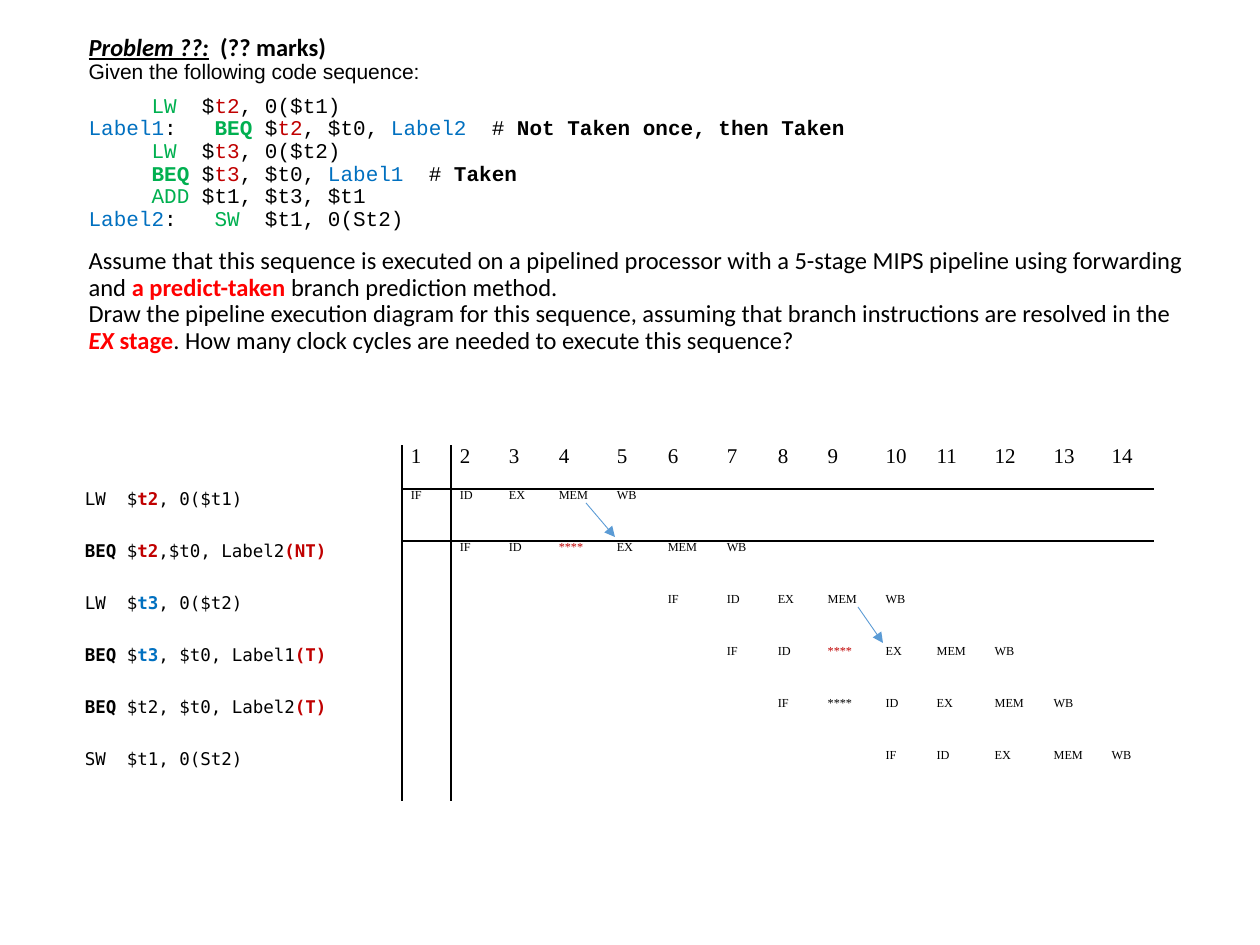
import dataclasses

import lxml.etree
import pptx
import pptx.dml.color
import pptx.enum.shapes
import pptx.enum.text
import pptx.oxml
import pptx.oxml.ns
import pptx.util

EMU_PER_PX = 914400 / 126


@dataclasses.dataclass(frozen=True)
class Theme:
    black: str = "000000"
    green: str = "00B050"
    dark_red: str = "C00000"
    red: str = "FF0000"
    blue: str = "0070C0"
    arrow: str = "5B9BD5"
    heading: tuple = ("Calibri", 14)
    intro: tuple = ("Arial", 12)
    code: tuple = ("Courier New", 12)
    instruction: tuple = ("DejaVu Sans Mono", 10)
    cycle: tuple = ("Times New Roman", 12)
    stage: tuple = ("Times New Roman", 7)


THEME = Theme()

# Span styles: colour and emphasis (b bold, i italic, u underline)
STYLES = {
    "plain": (THEME.black, ""),
    "bold": (THEME.black, "b"),
    "heading": (THEME.black, "biu"),
    "op": (THEME.green, ""),
    "branch": (THEME.green, "b"),
    "register": (THEME.dark_red, ""),
    "label": (THEME.blue, ""),
    "key": (THEME.red, "b"),
    "key italic": (THEME.red, "bi"),
    "hazard": (THEME.dark_red, "b"),
    "second hazard": (THEME.blue, "b"),
    "stall": (THEME.dark_red, ""),
}

# Paragraphs of the problem: typeface, space before, spans
PROBLEM = [
    (THEME.heading, 0, [("Problem ??:", "heading"), ("  (?? marks)", "bold")]),
    (THEME.intro, 0, [("Given the following code sequence:", "plain")]),
    (THEME.code, 6, [("\t", "plain"), ("LW  ", "op"), ("$", "plain"),
                     ("t2", "register"), (", 0($t1)", "plain")]),
    (THEME.code, 0, [("Label1", "label"), (":\t", "plain"), ("BEQ ", "branch"),
                     ("$", "plain"), ("t2", "register"), (", $t0, ", "plain"),
                     ("Label2", "label"), ("  # ", "plain"),
                     ("Not Taken once, then Taken", "bold")]),
    (THEME.code, 0, [("\t", "plain"), ("LW  ", "op"), ("$", "plain"),
                     ("t3", "register"), (", 0($t2)", "plain")]),
    (THEME.code, 0, [("\t", "plain"), ("BEQ ", "branch"), ("$", "plain"),
                     ("t3", "register"), (", $t0, ", "plain"),
                     ("Label1 ", "label"), (" # ", "plain"), ("Taken", "bold")]),
    (THEME.code, 0, [("\t", "plain"), ("ADD ", "op"), ("$t1, $t3, $t1", "plain")]),
    (THEME.code, 0, [("Label2", "label"), (":\t", "plain"), ("SW", "op"),
                     ("  $t1, 0(St2)", "plain")]),
    (THEME.heading, 10, [
        ("Assume that this sequence is executed on a pipelined processor with a "
         "5-stage MIPS pipeline using forwarding and ", "plain"),
        ("a predict-taken ", "key"), ("branch prediction method.", "plain")]),
    (THEME.heading, 0, [
        ("Draw the pipeline execution diagram for this sequence, assuming that "
         "branch instructions are resolved in the ", "plain"),
        ("EX", "key italic"), (" stage", "key"),
        (". How many clock cycles are needed to execute this sequence?", "plain")]),
]

# Instruction spans, first clock cycle, stages, style of a stall
PIPELINE = [
    ([("LW  $", "plain"), ("t2", "hazard"), (", 0($t1)", "plain")],
     1, "IF ID EX MEM WB", "plain"),
    ([("BEQ", "bold"), (" $", "plain"), ("t2", "hazard"),
      (",$t0, Label2", "plain"), ("(NT)", "hazard")],
     2, "IF ID **** EX MEM WB", "stall"),
    ([("LW  $", "plain"), ("t3", "second hazard"), (", 0($t2)", "plain")],
     6, "IF ID EX MEM WB", "plain"),
    ([("BEQ", "bold"), (" $", "plain"), ("t3", "second hazard"),
      (", $t0, Label1", "plain"), ("(T)", "hazard")],
     7, "IF ID **** EX MEM WB", "stall"),
    ([("BEQ", "bold"), (" $t2, $t0, Label2", "plain"), ("(T)", "hazard")],
     8, "IF **** ID EX MEM WB", "plain"),
    ([("SW  $t1, 0(St2)", "plain")], 10, "IF ID EX MEM WB", "plain"),
]
COLUMN_WIDTHS = [326, 49, 49, 50, 58, 51, 59, 51, 50, 58, 51, 58, 59, 58, 51]
HEADER_HEIGHT, ROW_HEIGHT = 44, 52
FORWARDING = [((586, 503), (615, 537)), ((858, 607), (883, 643))]
NO_STYLE = "{2D5ABB26-0587-4C30-8999-92F81FD0307C}"


def px(length):
    return pptx.util.Emu(round(length * EMU_PER_PX))


def add_element(parent, tag, **attributes):
    return lxml.etree.SubElement(parent, pptx.oxml.ns.qn(tag), attributes)


def add_spans(para, typeface, spans):
    for text, style in spans:
        color, emphasis = STYLES[style]
        span = para.add_run()
        span.text = text
        span.font.name, size = typeface
        span.font.size = pptx.util.Pt(size)
        span.font.color.rgb = pptx.dml.color.RGBColor.from_string(color)
        span.font.bold = "b" in emphasis
        span.font.italic = "i" in emphasis
        span.font.underline = "u" in emphasis


def fill_problem(box):
    box.left, box.top, box.width, box.height = px(76), px(29), px(1124), px(358)
    frame = box.text_frame
    frame.word_wrap = True
    frame.auto_size = pptx.enum.text.MSO_AUTO_SIZE.NONE
    frame.vertical_anchor = pptx.enum.text.MSO_ANCHOR.TOP
    for index, (typeface, space_before, spans) in enumerate(PROBLEM):
        para = frame.add_paragraph() if index else frame.paragraphs[0]
        if typeface == THEME.code:
            stops = add_element(para._p.get_or_add_pPr(), "a:tabLst")
            add_element(stops, "a:tab", pos=str(px(126)), algn="l")
        para.alignment = pptx.enum.text.PP_ALIGN.LEFT
        para.line_spacing = 0.9
        para.space_before = pptx.util.Pt(space_before)
        add_spans(para, typeface, spans)


def format_cell(cell, row, column):
    """Rule off the header row and the instruction column."""
    cell.margin_left = cell.margin_right = px(9)
    cell.margin_top = cell.margin_bottom = 0
    properties = cell._tc.get_or_add_tcPr()
    ruled = {"a:lnL": column == 1, "a:lnR": column == 0,
             "a:lnT": row == 1 and column > 0, "a:lnB": row == 0 and column > 0}
    for tag, visible in ruled.items():
        if visible:
            border = add_element(properties, tag, w=str(pptx.util.Pt(1)))
            fill = add_element(border, "a:solidFill")
            add_element(fill, "a:srgbClr", val=THEME.black)
    cell.fill.background()


def add_pipeline(page):
    height = HEADER_HEIGHT + ROW_HEIGHT * len(PIPELINE)
    frame = page.shapes.add_table(
        len(PIPELINE) + 1, len(COLUMN_WIDTHS),
        px(76), px(445), px(sum(COLUMN_WIDTHS)), px(height))
    table = frame.table
    table.first_row = table.horz_banding = False
    table._tbl.tblPr.find(pptx.oxml.ns.qn("a:tableStyleId")).text = NO_STYLE
    for column, width in zip(table.columns, COLUMN_WIDTHS):
        column.width = px(width)
    for row_index, row in enumerate(table.rows):
        row.height = px(ROW_HEIGHT if row_index else HEADER_HEIGHT)
        for column_index, cell in enumerate(row.cells):
            format_cell(cell, row_index, column_index)

    def write(row, column, typeface, spans):
        add_spans(table.cell(row, column).text_frame.paragraphs[0], typeface, spans)

    for cycle in range(1, len(COLUMN_WIDTHS)):
        write(0, cycle, THEME.cycle, [(str(cycle), "plain")])
    for row, (instruction, start, stages, stall_style) in enumerate(PIPELINE, 1):
        write(row, 0, THEME.instruction, instruction)
        for cycle, stage in enumerate(stages.split(), start):
            style = stall_style if stage == "****" else "plain"
            write(row, cycle, THEME.stage, [(stage, style)])


def add_arrow(page, start, end):
    arrow = page.shapes.add_connector(
        pptx.enum.shapes.MSO_CONNECTOR.STRAIGHT, *map(px, start + end))
    arrow.line.color.rgb = pptx.dml.color.RGBColor.from_string(THEME.arrow)
    arrow.line.width = pptx.util.Pt(0.5)
    add_element(arrow.line._get_or_add_ln(), "a:tailEnd", type="triangle")
    add_element(arrow._element.spPr, "a:effectLst")


def main():
    deck = pptx.Presentation()
    deck.slide_width, deck.slide_height = px(1260), px(945)
    page = deck.slides.add_slide(deck.slide_layouts[0])
    title = page.shapes.title._element
    title.getparent().remove(title)
    fill_problem(page.placeholders[1])
    add_pipeline(page)
    for start, end in FORWARDING:
        add_arrow(page, start, end)
    deck.save("out.pptx")


if __name__ == "__main__":
    main()
